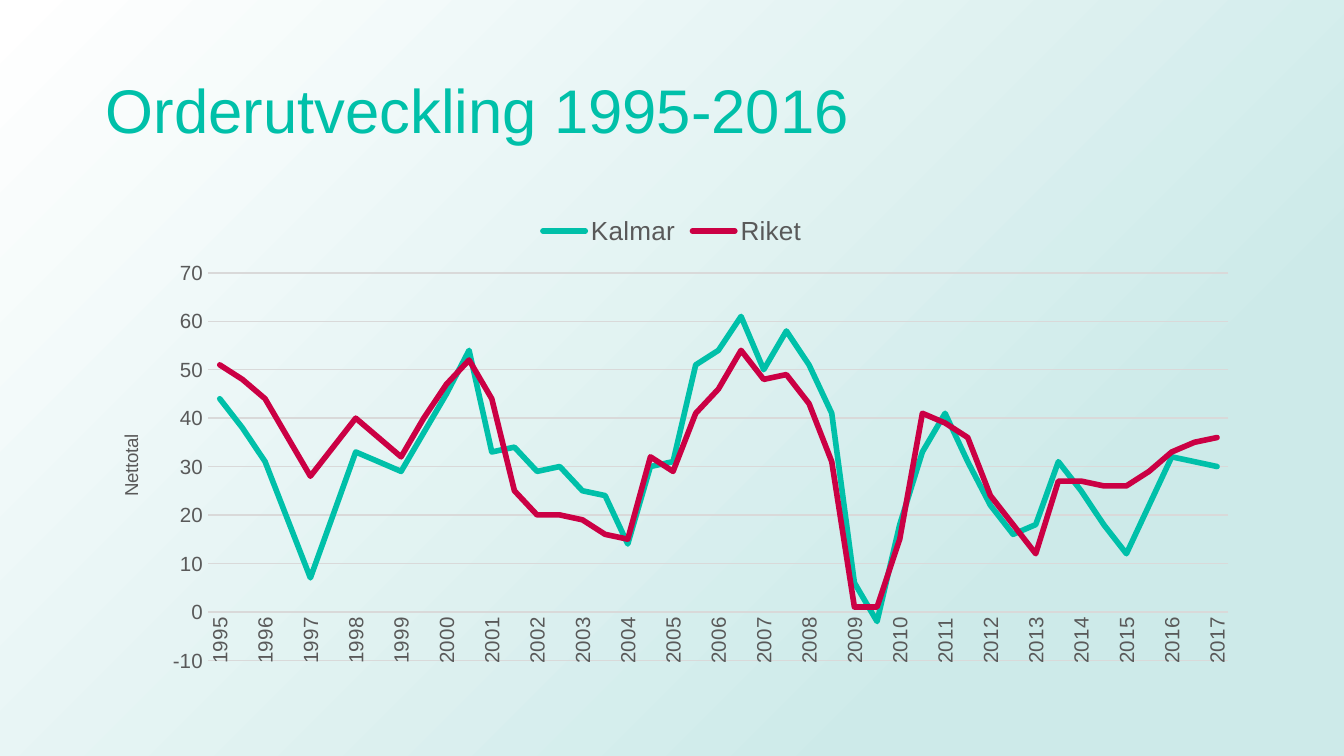
from lxml import etree
from pptx import Presentation
from pptx.chart.data import CategoryChartData
from pptx.dml.color import RGBColor
from pptx.enum.chart import XL_CHART_TYPE, XL_LEGEND_POSITION, XL_TICK_MARK
from pptx.enum.shapes import MSO_SHAPE
from pptx.enum.text import MSO_ANCHOR, PP_ALIGN
from pptx.oxml import parse_xml
from pptx.oxml.ns import nsdecls, qn
from pptx.util import Inches, Pt

LINE_CHART = XL_CHART_TYPE.LINE
LEGEND_TOP = XL_LEGEND_POSITION.TOP
NO_TICK = XL_TICK_MARK.NONE
RECTANGLE = MSO_SHAPE.RECTANGLE
MIDDLE = MSO_ANCHOR.MIDDLE
LEFT = PP_ALIGN.LEFT

WIDTH = Inches(10)
HEIGHT = WIDTH * 9 // 16
COLUMNS, ROWS = 100, 56.25
CELL = WIDTH // COLUMNS
FONT = "Arial"
TEAL, CRIMSON, GREY, RULE = "00C0A9", "CB0044", "595959", "D9D9D9"

# Two readings a year, ending with a single one for 2017
YEARS = [str(1995 + half // 2) for half in range(45)]
SERIES = [
    ("Kalmar", TEAL,
     [44, 38, 31, 19, 7, 20, 33, 31, 29, 37, 45, 54, 33, 34, 29,
      30, 25, 24, 14, 30, 31, 51, 54, 61, 50, 58, 51, 41, 6, -2,
      18, 33, 41, 31, 22, 16, 18, 31, 25, 18, 12, 22, 32, 31, 30]),
    ("Riket", CRIMSON,
     [51, 48, 44, 36, 28, 34, 40, 36, 32, 40, 47, 52, 44, 25, 20,
      20, 19, 16, 15, 32, 29, 41, 46, 54, 48, 49, 43, 31, 1, 1,
      15, 41, 39, 36, 24, 18, 12, 27, 27, 26, 26, 29, 33, 35, 36]),
]


def color(value):
    return RGBColor.from_string(value)


def grid_box(column, row, columns, rows):
    """Turn square grid cells into a box in EMU."""
    return [int(cells * CELL) for cells in (column, row, columns, rows)]


def style_font(font, size, value):
    font.name, font.size, font.bold = FONT, Pt(size), False
    font.color.rgb = color(value)


def style_line(line, width, value):
    line.width = Pt(width)
    line.color.rgb = color(value)


def add_background(page, box):
    """Place a gradient that spreads from the lower right corner."""
    panel = page.shapes.add_shape(RECTANGLE, *box)
    panel.shadow.inherit = False
    panel.line.fill.background()
    panel.fill.gradient()
    stops = panel.fill.gradient_stops
    for stop, position, value in zip(stops, (0.23, 1), ("CDEAE9", "FFFFFF")):
        stop.position = position
        stop.color.rgb = color(value)
    linear = panel._element.spPr.find(".//" + qn("a:lin"))
    linear.getparent().replace(linear, parse_xml(
        f'<a:path {nsdecls("a")} path="circle">'
        '<a:fillToRect l="100000" t="100000"/></a:path>'))
    page.shapes._spTree.insert(2, panel._element)


def add_title(page, box, text):
    title = page.shapes.title
    title.left, title.top, title.width, title.height = box
    frame = title.text_frame
    frame.vertical_anchor = MIDDLE
    para = frame.paragraphs[0]
    para.alignment = LEFT
    para.line_spacing = 0.9
    span = para.add_run()
    span.text = text
    style_font(span.font, 33, TEAL)


def manual_layout(x, y, **size):
    """Make a chart layout from shares of the chart's own box."""
    layout = parse_xml(f'<c:layout {nsdecls("c")}><c:manualLayout/></c:layout>')
    settings = {"xMode": "edge", "yMode": "edge", "x": x, "y": y, **size}
    if size:
        settings = {"layoutTarget": "inner", **settings}
    for name, value in settings.items():
        etree.SubElement(layout[0], qn("c:" + name)).set("val", str(value))
    return layout


def style_year_axis(axis):
    axis.major_tick_mark = axis.minor_tick_mark = NO_TICK
    style_font(axis.tick_labels.font, 11, GREY)
    axis._element.find(qn("c:txPr")).find(qn("a:bodyPr")).set("rot", "-5400000")
    style_line(axis.format.line, 0.75, RULE)
    skip = parse_xml(f'<c:tickLblSkip {nsdecls("c")} val="2"/>')
    axis._element.find(qn("c:noMultiLvlLbl")).addprevious(skip)


def style_value_axis(axis):
    axis.minimum_scale, axis.maximum_scale, axis.major_unit = -10, 70, 10
    axis.major_tick_mark = axis.minor_tick_mark = NO_TICK
    style_font(axis.tick_labels.font, 11, GREY)
    axis.tick_labels.number_format = "0"
    axis.tick_labels.number_format_is_linked = False
    axis.format.line.fill.background()
    style_line(axis.major_gridlines.format.line, 0.75, RULE)
    frame = axis.axis_title.text_frame
    span = frame.paragraphs[0].add_run()
    span.text = "Nettotal"
    style_font(span.font, 10, GREY)
    frame._txBody.find(qn("a:bodyPr")).set("rot", "-5400000")
    title = axis.axis_title._element
    for layout in title.findall(qn("c:layout")):
        title.remove(layout)
    title.find(qn("c:tx")).addnext(manual_layout(0.02, 0.48))


def add_order_chart(page, box):
    data = CategoryChartData(number_format="0")
    data.categories = YEARS
    for name, _, values in SERIES:
        data.add_series(name, values)
    chart = page.shapes.add_chart(LINE_CHART, *box, data).chart
    chart.has_title = False
    style_font(chart.font, 10, GREY)
    chart.has_legend = True
    chart.legend.position = LEGEND_TOP
    chart.legend.include_in_layout = False
    style_font(chart.legend.font, 14, GREY)
    style_year_axis(chart.category_axis)
    style_value_axis(chart.value_axis)

    plot = chart.plots[0]
    plot.vary_by_categories = False
    for series, (_, value, _) in zip(plot.series, SERIES):
        series.smooth = False
        style_line(series.format.line, 3, value)
        line = series.format.line._get_or_add_ln()
        line.set("cap", "rnd")
        etree.SubElement(line, qn("a:round"))
        series.marker._element.get_or_add_marker().get_or_add_symbol().set(
            "val", "none")

    area = chart._chartSpace.chart.plotArea
    for layout in area.findall(qn("c:layout")):
        area.remove(layout)
    area.insert(0, manual_layout(0.1, 0.15, w=0.88, h=0.81))


def main():
    deck = Presentation()
    deck.slide_width, deck.slide_height = WIDTH, HEIGHT
    page = deck.slides.add_slide(deck.slide_layouts[5])
    add_background(page, grid_box(0, 0, COLUMNS, ROWS))
    add_title(page, grid_box(6.88, 3, 86.25, 10.87), "Orderutveckling 1995-2016")
    add_order_chart(page, grid_box(6.88, 14.97, 86.25, 35.6))
    deck.save("out.pptx")


if __name__ == "__main__":
    main()
